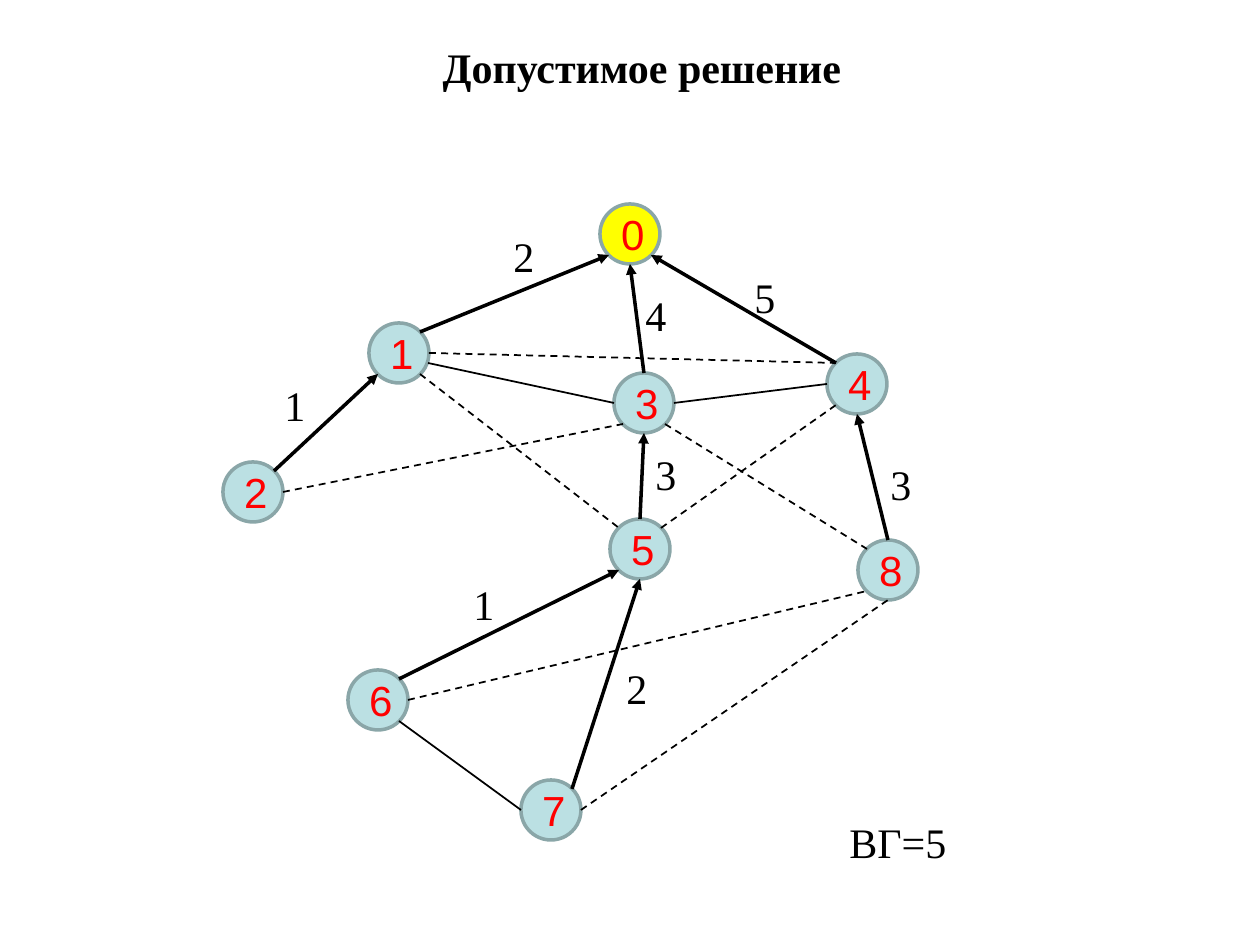
from lxml import etree
from pptx import Presentation
from pptx.dml.color import RGBColor
from pptx.enum.dml import MSO_LINE
from pptx.enum.shapes import MSO_CONNECTOR, MSO_SHAPE
from pptx.enum.text import MSO_ANCHOR, MSO_AUTO_SIZE, PP_ALIGN
from pptx.oxml.ns import qn
from pptx.util import Emu, Pt

PX = 914400 // 126
OVAL = MSO_SHAPE.OVAL
STRAIGHT = MSO_CONNECTOR.STRAIGHT
DASH = MSO_LINE.DASH
LEFT, CENTER = PP_ALIGN.LEFT, PP_ALIGN.CENTER
MIDDLE = MSO_ANCHOR.MIDDLE
FIT_SHAPE = MSO_AUTO_SIZE.SHAPE_TO_FIT_TEXT

RADIUS = 30
DIAGONAL = 21
SITES = {
    "top": (0, -RADIUS), "bottom": (0, RADIUS),
    "left": (-RADIUS, 0), "right": (RADIUS, 0),
    "top left": (-DIAGONAL, -DIAGONAL), "top right": (DIAGONAL, -DIAGONAL),
    "bottom left": (-DIAGONAL, DIAGONAL), "bottom right": (DIAGONAL, DIAGONAL),
    "lower right": (29, 10),
}

GRAPH_BOX = (223, 204)
NODE_CENTERS = {  # relative to the graph box
    "0": (407, 30), "2": (30, 288), "7": (328, 606), "3": (421, 199),
    "4": (634, 180), "6": (155, 496), "1": (176, 149), "5": (417, 345),
    "8": (665, 366),
}
EDGES = {
    "arrow": [
        ("0", "bottom", "3", "top"),
        ("0", "bottom left", "1", "top right"),
        ("0", "bottom right", "4", "top left"),
        ("1", "bottom left", "2", "top right"),
        ("3", "bottom", "5", "top"),
        ("4", "bottom", "8", "top"),
        ("5", "bottom left", "6", "top right"),
        ("5", "bottom", "7", "top right"),
    ],
    "solid": [
        ("4", "left", "3", "right"),
        ("1", "lower right", "3", "left"),
        ("6", "bottom right", "7", "left"),
    ],
    "dashed": [
        ("1", "right", "4", "top left"),
        ("2", "right", "3", "bottom left"),
        ("1", "bottom right", "5", "top left"),
        ("3", "bottom right", "8", "top left"),
        ("5", "top right", "4", "bottom left"),
        ("6", "right", "8", "bottom left"),
        ("7", "right", "8", "bottom"),
    ],
}
EDGE_FORMATS = {
    "arrow": {"width": Pt(2)},
    "solid": {"width": Pt(1)},
    "dashed": {"width": Pt(1), "dash_style": DASH},
}
WEIGHTS = [  # text, left and top relative to the graph box
    ("1", 238, 368), ("1", 49, 169), ("2", 391, 452), ("2", 278, 20),
    ("3", 420, 238), ("3", 655, 248), ("4", 410, 79), ("5", 519, 61),
]


def px(*lengths):
    return [Emu(round(length * PX)) for length in lengths]


def color(hex_value):
    return RGBColor.from_string(hex_value)


def write(shape, text, font_name, hex_value, align, bold=False):
    paragraph = shape.text_frame.paragraphs[0]
    paragraph.alignment = align
    run = paragraph.add_run()
    run.text = text
    for name, value in {"name": font_name, "size": Pt(24), "bold": bold}.items():
        setattr(run.font, name, value)
    run.font.color.rgb = color(hex_value)


def add_label(slide, text, box, align=LEFT, bold=False):
    label = slide.shapes.add_textbox(*px(*box))
    label.text_frame.word_wrap = False
    label.text_frame.auto_size = FIT_SHAPE
    write(label, text, "Times New Roman", "000000", align, bold)


def add_node(slide, text, center):
    x, y = center
    node = slide.shapes.add_shape(
        OVAL, *px(x - RADIUS, y - RADIUS, 2 * RADIUS, 2 * RADIUS))
    node.shadow.inherit = False
    node.fill.solid()
    node.fill.fore_color.rgb = color("FFFF00" if text == "0" else "BBE0E3")
    node.line.color.rgb = color("8AA6A8")
    node.line.width = Pt(2)
    node.text_frame.vertical_anchor = MIDDLE
    write(node, text, "Arial", "FF0000", CENTER)


def add_edge(slide, start, end, kind):
    edge = slide.shapes.add_connector(STRAIGHT, *px(*start, *end))
    edge.line.color.rgb = color("000000")
    for name, value in EDGE_FORMATS[kind].items():
        setattr(edge.line, name, value)
    properties = edge._element.spPr
    if kind == "arrow":
        line = properties.find(qn("a:ln"))
        etree.SubElement(line, qn("a:headEnd"), type="triangle")
    etree.SubElement(properties, qn("a:effectLst"))


def add_graph(slide, left, top):
    centers = {name: (left + x, top + y) for name, (x, y) in NODE_CENTERS.items()}

    def site_point(node, site):
        return [c + offset for c, offset in zip(centers[node], SITES[site])]

    for name, center in centers.items():
        add_node(slide, name, center)
    for kind, edges in EDGES.items():
        for parent, parent_site, child, child_site in edges:
            add_edge(slide, site_point(parent, parent_site),
                     site_point(child, child_site), kind)
    for text, x, y in WEIGHTS:
        add_label(slide, text, (left + x, top + y, 47, 64))


def main():
    presentation = Presentation()
    presentation.slide_width, presentation.slide_height = px(1260, 945)
    slide = presentation.slides.add_slide(presentation.slide_layouts[6])
    add_label(slide, "Допустимое решение", (428, 35, 428, 64), CENTER, bold=True)
    add_graph(slide, *GRAPH_BOX)
    add_label(slide, "ВГ=5", (837, 810, 123, 64))
    presentation.save("out.pptx")


if __name__ == "__main__":
    main()
